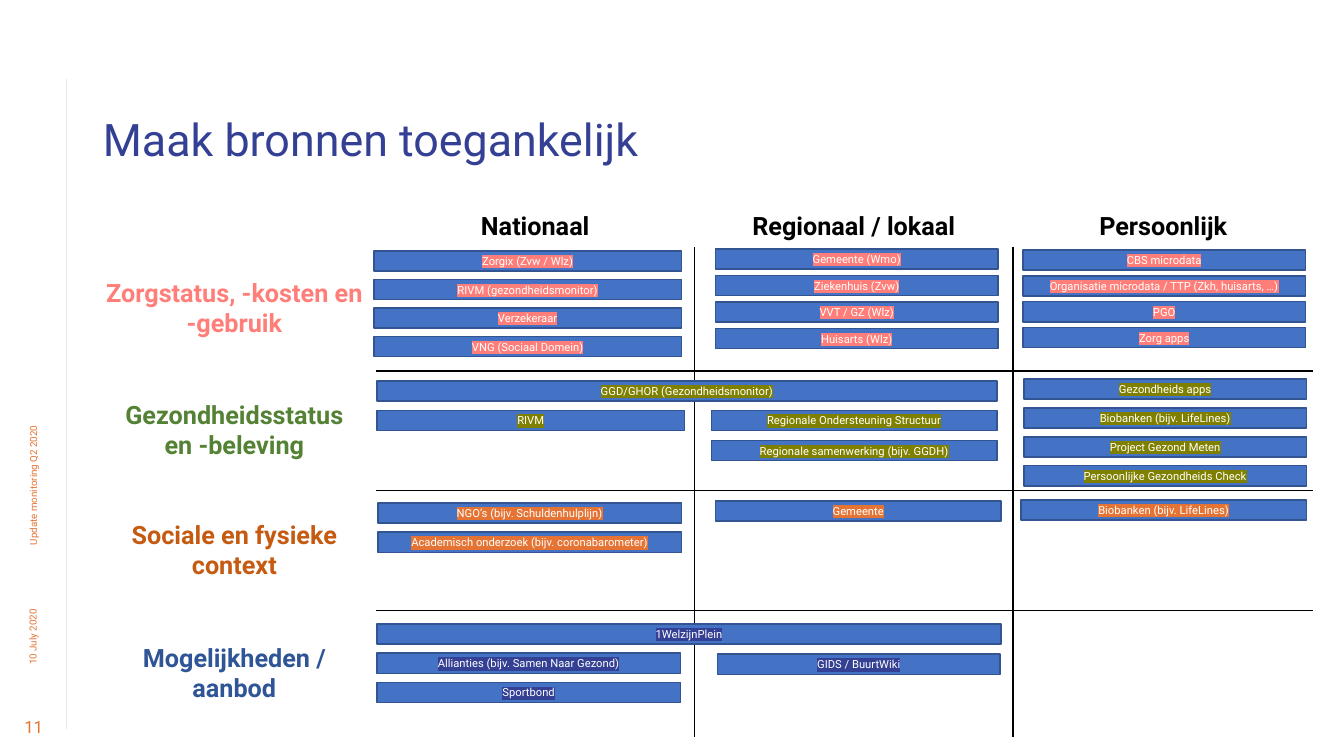
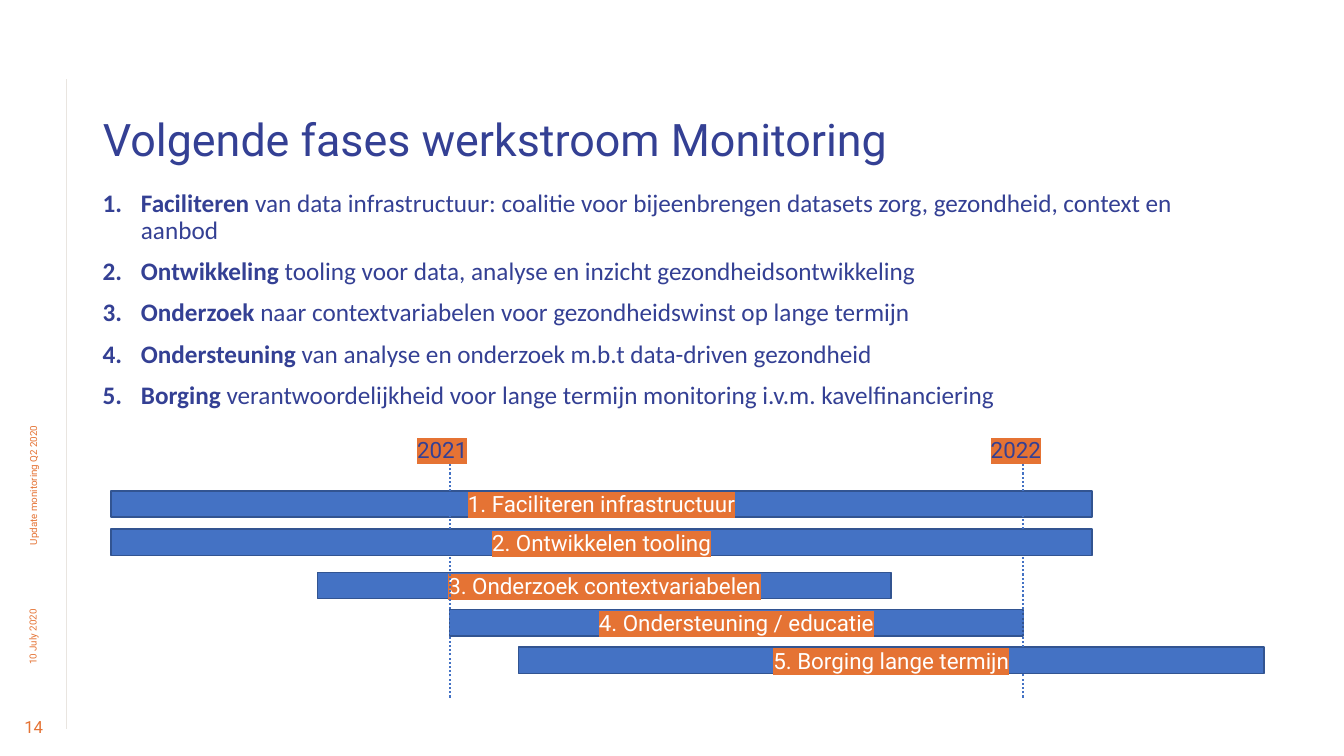
from dataclasses import dataclass

from lxml.etree import SubElement
from pptx import Presentation
from pptx.dml.color import RGBColor
from pptx.enum.dml import MSO_LINE_DASH_STYLE as Dash
from pptx.enum.shapes import MSO_CONNECTOR as Connector
from pptx.enum.shapes import MSO_SHAPE as Preset
from pptx.enum.text import MSO_ANCHOR as Anchor
from pptx.enum.text import PP_ALIGN as Align
from pptx.oxml.ns import qn
from pptx.util import Inches, Pt


@dataclass(frozen=True)
class Theme:
    """Colours, type sizes and fonts shared by the slides."""

    navy: str = "344094"
    orange: str = "E57334"
    coral: str = "FF7E79"
    olive: str = "808000"
    green: str = "548235"
    rust: str = "C55A11"
    steel: str = "2F5597"
    bar: str = "4472C4"
    bar_edge: str = "325491"
    rule: str = "E9E5E0"
    black: str = "000000"
    white: str = "FFFFFF"
    font: str = "Roboto"
    body_font: str = "Calibri"
    title_size: int = 32
    heading_size: int = 18
    timeline_size: int = 16
    number_size: int = 12
    label_size: int = 8
    footer_size: int = 7


@dataclass(frozen=True)
class BarStack:
    """Bars in one table cell, offset from its corner in grid units."""

    column: int
    row: int
    left: float
    top: float
    width: float
    labels: tuple
    pitch: float = 2.9


THEME = Theme()
GRID_UNIT = Inches(0.1)
SLIDE_COLUMNS, SLIDE_ROWS = 133.33, 75
CONTENT_LEFT = 9.2
TABLE_TOP = 17.7
TABLE_COLUMNS = (28.1, 31.6, 31.6, 29.8)
TABLE_ROWS = (6.8, 12.3, 11.9, 11.9, 12.5)
NO_GRID_STYLE = "{2D5ABB26-0587-4C30-8999-92F81FD0307C}"
BAR_HEIGHT = 2
SCOPES = ("Nationaal", "Regionaal / lokaal", "Persoonlijk")
TOPICS = (
    (("Zorgstatus, -kosten en -gebruik",), THEME.coral, THEME.coral),
    (("Gezondheidsstatus", "en -beleving"), THEME.green, THEME.olive),
    (("Sociale en fysieke context",), THEME.rust, THEME.orange),
    (("Mogelijkheden / aanbod",), THEME.steel, THEME.navy),
)
SOURCES = (
    BarStack(1, 1, -0.2, 0.4, 30.5, (
        "Zorgix (Zvw / Wlz)", "RIVM (gezondheidsmonitor)",
        "Verzekeraar", "VNG (Sociaal Domein)"), 2.83),
    BarStack(2, 1, 2.1, 0.2, 28, (
        "Gemeente (Wmo)", "Ziekenhuis (Zvw)", "VVT / GZ (Wlz)", "Huisarts (Wlz)"), 2.63),
    BarStack(3, 1, 1, 0.3, 28, (
        "CBS microdata", "Organisatie microdata / TTP (Zkh, huisarts, …)",
        "PGO", "Zorg apps"), 2.57),
    BarStack(1, 2, 0.1, 1, 61.5, ("GGD/GHOR (Gezondheidsmonitor)",)),
    BarStack(1, 2, 0.1, 3.9, 30.5, ("RIVM",)),
    BarStack(2, 2, 1.7, 3.9, 28.3, (
        "Regionale Ondersteuning Structuur", "Regionale samenwerking (bijv. GGDH)"), 3),
    BarStack(3, 2, 1.1, 0.8, 28, (
        "Gezondheids apps", "Biobanken (bijv. LifeLines)",
        "Project Gezond Meten", "Persoonlijke Gezondheids Check"), 2.87),
    BarStack(1, 3, 0.2, 1.2, 30.1, (
        "NGO’s (bijv. Schuldenhulplijn)", "Academisch onderzoek (bijv. coronabarometer)")),
    BarStack(2, 3, 2.1, 1, 28.3, ("Gemeente",)),
    BarStack(3, 3, 0.8, 0.9, 28.3, ("Biobanken (bijv. LifeLines)",)),
    BarStack(1, 4, 0.1, 1.3, 61.9, ("1WelzijnPlein",)),
    BarStack(1, 4, 0.1, 4.2, 30.1, (
        "Allianties (bijv. Samen Naar Gezond)", "Sportbond")),
    BarStack(2, 4, 2.3, 4.3, 28, ("GIDS / BuurtWiki",)),
)
PHASES = (
    ("Faciliteren", " van data infrastructuur: coalitie voor bijeenbrengen datasets zorg, "
     "gezondheid, context en aanbod"),
    ("Ontwikkeling ", "tooling voor data, analyse en inzicht gezondheidsontwikkeling"),
    ("Onderzoek", " naar contextvariabelen voor gezondheidswinst op lange termijn"),
    ("Ondersteuning", " van analyse en onderzoek m.b.t data-driven gezondheid"),
    ("Borging ", "verantwoordelijkheid voor lange termijn monitoring i.v.m. kavelfinanciering"),
)
FIRST_YEAR, FIRST_YEAR_LEFT, YEAR_WIDTH = 2021, 44.6, 56.9
TIMELINE = (
    ("1. Faciliteren infrastructuur", -0.59, 1.71, 48.7),
    ("2. Ontwikkelen tooling", -0.59, 1.71, 52.5),
    ("3. Onderzoek contextvariabelen", -0.23, 1, 56.8),
    ("4. Ondersteuning / educatie", 0, 1, 60.5),
    ("5. Borging lange termijn", 0.12, 1.3, 64.2),
)


def grid(*units):
    """Turn grid units into slide lengths."""
    return [round(unit * GRID_UNIT) for unit in units]


def apply(target, **values):
    """Set each named attribute on the target."""
    for name, value in values.items():
        setattr(target, name, value)


def style_font(font, size, color, name=THEME.font, bold=False):
    """Format a font."""
    apply(font, size=Pt(size), name=name, bold=bold)
    font.color.rgb = RGBColor.from_string(color)


def write(paragraph, text, size, color, highlight=None, **font_values):
    """Add a formatted run, highlighted if a colour is given."""
    run = paragraph.add_run()
    run.text = text
    style_font(run.font, size, color, **font_values)
    if highlight:
        marker = run.font._element.makeelement(qn("a:highlight"))
        SubElement(marker, qn("a:srgbClr"), val=highlight)
        run.font._element.find(qn("a:solidFill")).addnext(marker)


def add_text_box(slide, box, anchor=Anchor.TOP, rotation=0):
    """Add a wrapping text box and return its text frame."""
    shape = slide.shapes.add_textbox(*grid(*box))
    shape.rotation = rotation
    apply(shape.text_frame, word_wrap=True, vertical_anchor=anchor)
    return shape.text_frame


def add_line(slide, start, end, color, width, dash=None):
    """Add a straight line without shadow."""
    connector = slide.shapes.add_connector(Connector.STRAIGHT, *grid(*start, *end))
    connector.line.color.rgb = RGBColor.from_string(color)
    apply(connector.line, width=Pt(width), dash_style=dash)
    SubElement(connector._element.spPr, qn("a:effectLst"))


def add_bar(slide, box, text, size, highlight):
    """Add a blue bar with a highlighted label."""
    shape = slide.shapes.add_shape(Preset.RECTANGLE, *grid(*box))
    shape.shadow.inherit = False
    shape.fill.solid()
    shape.fill.fore_color.rgb = RGBColor.from_string(THEME.bar)
    shape.line.color.rgb = RGBColor.from_string(THEME.bar_edge)
    shape.line.width = Pt(1)
    apply(shape.text_frame, word_wrap=True, vertical_anchor=Anchor.MIDDLE,
          margin_top=0, margin_bottom=0)
    paragraph = shape.text_frame.paragraphs[0]
    paragraph.alignment = Align.CENTER
    write(paragraph, text, size, THEME.white, highlight)


def add_framed_slide(presentation, title, number):
    """Add a slide with title, side rule, footers and number."""
    slide = presentation.slides.add_slide(presentation.slide_layouts[5])
    add_line(slide, (6.6, 72.3), (6.6, 7.8), THEME.rule, 0.5)
    left, top, width, height = grid(CONTENT_LEFT, 6, 120.2, 11)
    apply(slide.shapes.title, left=left, top=top, width=width, height=height)
    frame = slide.shapes.title.text_frame
    apply(frame, vertical_anchor=Anchor.BOTTOM, word_wrap=True)
    apply(frame.paragraphs[0], alignment=Align.LEFT, line_spacing=0.9)
    write(frame.paragraphs[0], title, THEME.title_size, THEME.navy)
    footers = (
        (str(number), (0.1, 69.2, 6.5, 5.8), 0, THEME.number_size, Align.CENTER),
        ("10 July 2020", (-2.7, 59.4, 11.9, 3.2), 270, THEME.footer_size, Align.LEFT),
        ("Update monitoring Q2 2020", (-19.2, 30.9, 45, 3.3), 270,
         THEME.footer_size, Align.LEFT),
    )
    for text, box, rotation, size, alignment in footers:
        paragraph = add_text_box(slide, box, Anchor.MIDDLE, rotation).paragraphs[0]
        paragraph.alignment = alignment
        write(paragraph, text, size, THEME.orange)
    return slide


def fill_cell(cell, lines, color, anchor):
    """Write centred bold lines in a table cell."""
    cell.vertical_anchor = anchor
    for index, line in enumerate(lines):
        frame = cell.text_frame
        paragraph = frame.add_paragraph() if index else frame.paragraphs[0]
        paragraph.alignment = Align.CENTER
        write(paragraph, line, THEME.heading_size, color, bold=True)


def border_cell(cell, sides):
    """Draw black borders on the given sides."""
    properties = cell._tc.get_or_add_tcPr()
    for side in sides:
        line = SubElement(properties, qn(f"a:ln{side}"), w=str(Pt(1)))
        fill = SubElement(line, qn("a:solidFill"))
        SubElement(fill, qn("a:srgbClr"), val=THEME.black)


def add_source_table(slide):
    """Add the matrix of topics and scopes."""
    row_count, column_count = len(TABLE_ROWS), len(TABLE_COLUMNS)
    box = grid(CONTENT_LEFT, TABLE_TOP, sum(TABLE_COLUMNS), sum(TABLE_ROWS))
    table = slide.shapes.add_table(row_count, column_count, *box).table
    apply(table, first_row=False, horz_banding=False)
    table._tbl.tblPr.find(qn("a:tableStyleId")).text = NO_GRID_STYLE
    for column, width in zip(table.columns, grid(*TABLE_COLUMNS)):
        column.width = width
    for row, height in zip(table.rows, grid(*TABLE_ROWS)):
        row.height = height
    for row in range(row_count):
        for column in range(column_count):
            cell = table.cell(row, column)
            if row and column:
                drawn = {"L": column > 1, "R": column < column_count - 1,
                         "T": row > 1, "B": row < row_count - 1}
                border_cell(cell, [side for side, shown in drawn.items() if shown])
            cell.fill.background()
    for column, scope in enumerate(SCOPES, 1):
        fill_cell(table.cell(0, column), (scope,), THEME.black, Anchor.BOTTOM)
    for row, (lines, color, _) in enumerate(TOPICS, 1):
        fill_cell(table.cell(row, 0), lines, color, Anchor.MIDDLE)


def add_bar_stack(slide, stack):
    """Stack the source bars of one table cell."""
    left = CONTENT_LEFT + sum(TABLE_COLUMNS[:stack.column]) + stack.left
    top = TABLE_TOP + sum(TABLE_ROWS[:stack.row]) + stack.top
    highlight = TOPICS[stack.row - 1][2]
    for index, label in enumerate(stack.labels):
        box = (left, top + index * stack.pitch, stack.width, BAR_HEIGHT)
        add_bar(slide, box, label, THEME.label_size, highlight)


def add_phase_list(slide):
    """Add the numbered list of phases."""
    frame = add_text_box(slide, (CONTENT_LEFT, 18.4, 111.6, 24))
    for index, (lead, rest) in enumerate(PHASES):
        paragraph = frame.add_paragraph() if index else frame.paragraphs[0]
        apply(paragraph, line_spacing=0.9, space_before=Pt(10 if index else 0))
        properties = paragraph._p.get_or_add_pPr()
        indent = Inches(0.38)
        properties.set("marL", str(indent))
        properties.set("indent", str(-indent))
        SubElement(properties, qn("a:buFont"), typeface="+mj-lt")
        SubElement(properties, qn("a:buAutoNum"), type="arabicPeriod")
        for text, bold in ((lead, True), (rest, False)):
            write(paragraph, text, THEME.heading_size, THEME.navy,
                  name=THEME.body_font, bold=bold)


def add_timeline(slide):
    """Add the phase bars and the year markers."""
    for label, start, years, top in TIMELINE:
        box = (FIRST_YEAR_LEFT + start * YEAR_WIDTH, top, years * YEAR_WIDTH, 2.6)
        add_bar(slide, box, label, THEME.timeline_size, THEME.orange)
    for index in range(2):
        left = FIRST_YEAR_LEFT + index * YEAR_WIDTH
        add_line(slide, (left, 69.2), (left, 45.7), THEME.bar, 1.5, Dash.ROUND_DOT)
        paragraph = add_text_box(slide, (left - 4.2, 42.8, 8.8, 3.7)).paragraphs[0]
        write(paragraph, str(FIRST_YEAR + index), THEME.timeline_size,
              THEME.navy, THEME.orange)


def main():
    """Build and save the presentation."""
    presentation = Presentation()
    width, height = grid(SLIDE_COLUMNS, SLIDE_ROWS)
    apply(presentation, slide_width=width, slide_height=height)
    slide = add_framed_slide(presentation, "Maak bronnen toegankelijk", 11)
    add_source_table(slide)
    for stack in SOURCES:
        add_bar_stack(slide, stack)
    slide = add_framed_slide(presentation, "Volgende fases werkstroom Monitoring", 14)
    add_phase_list(slide)
    add_timeline(slide)
    presentation.save("out.pptx")


if __name__ == "__main__":
    main()
